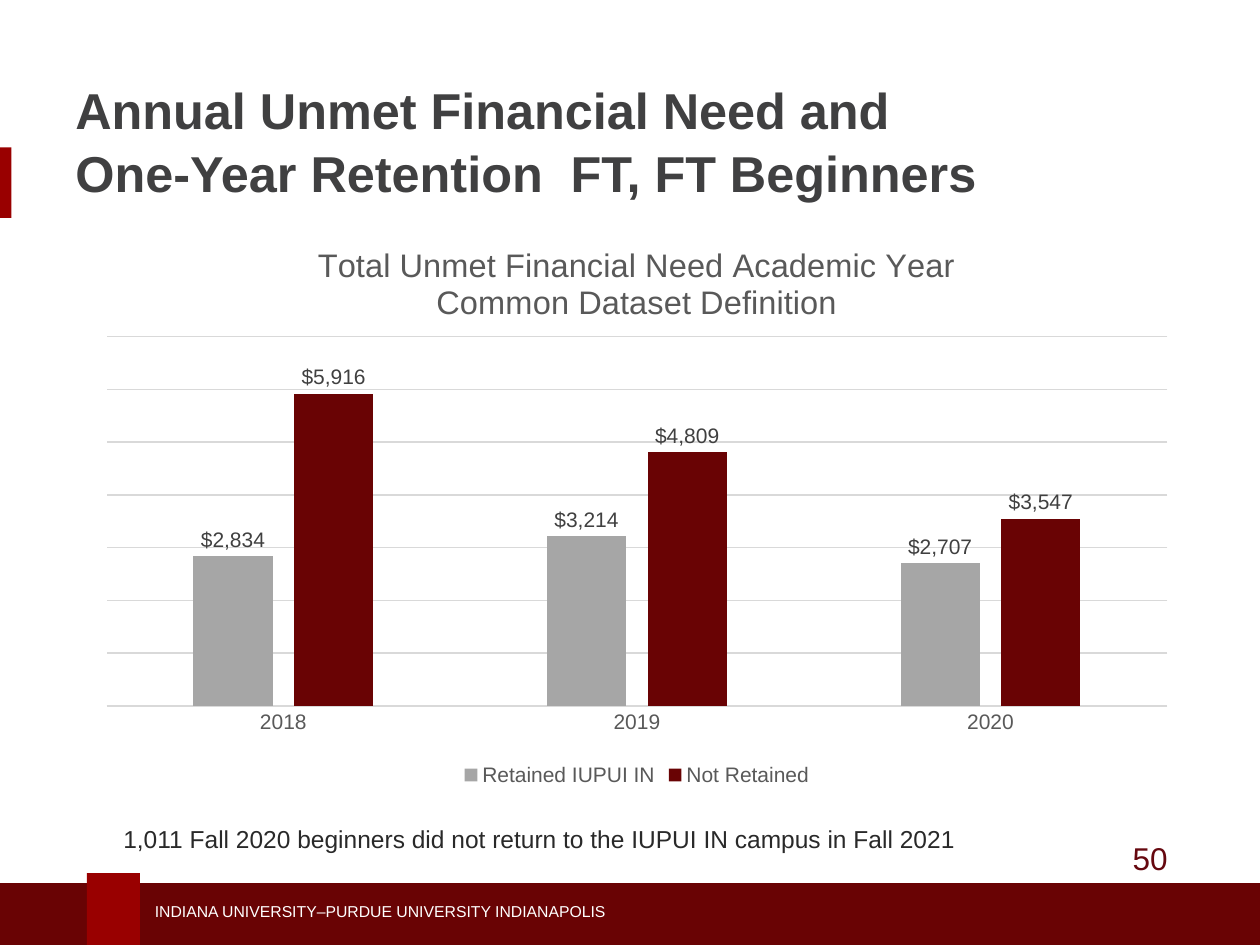
from lxml import etree
from pptx import Presentation
from pptx.chart.data import CategoryChartData
from pptx.dml.color import RGBColor
from pptx.enum.chart import XL_CHART_TYPE, XL_LABEL_POSITION, XL_LEGEND_POSITION, XL_TICK_MARK
from pptx.enum.shapes import MSO_SHAPE
from pptx.enum.text import MSO_ANCHOR
from pptx.util import Inches, Pt

COLUMNS = XL_CHART_TYPE.COLUMN_CLUSTERED
OUTSIDE = XL_LABEL_POSITION.OUTSIDE_END
BOTTOM = XL_LEGEND_POSITION.BOTTOM
NO_TICK = XL_TICK_MARK.NONE
RECTANGLE = MSO_SHAPE.RECTANGLE
TOP, MIDDLE = MSO_ANCHOR.TOP, MSO_ANCHOR.MIDDLE

WIDTH, HEIGHT = 10, 7.5
FONT = "Arial"
CRIMSON, DARK_RED, GRAY, RULE = "990000", "690304", "A6A6A6", "D9D9D9"

BLOCKS = [
    ((0, 1.17, 0.09, 0.56), CRIMSON),
    ((-0.03, 7.01, 10.09, 0.5), DARK_RED),
    ((0.69, 6.93, 0.42, 0.58), CRIMSON),
]
TEXTS = [
    ("INDIANA UNIVERSITY–PURDUE UNIVERSITY INDIANAPOLIS",
     (1.13, 7.11, 3.95, 0.25), 9, "FFFFFF", False, MIDDLE, True),
    ("Annual Unmet Financial Need and \vOne-Year Retention  FT, FT Beginners",
     (0.5, 0.76, 8.75, 0.7), 28.8, "404041", True, MIDDLE, True),
    ("50", (8.89, 6.61, 0.9, 0.4), 18, "66080F", False, TOP, True),
    ("1,011 Fall 2020 beginners did not return to the IUPUI IN campus in Fall 2021",
     (0.88, 6.49, 6.85, 0.34), 14, "292929", False, TOP, False),
]
CHART_AREA = (0.67, 1.77, 8.77, 4.51)
CHART_TITLE = ["Total Unmet Financial Need Academic Year", "Common Dataset Definition"]
PLOT_SHARES = {"x": 0.02, "y": 0.2, "w": 0.96, "h": 0.65}
YEARS = ["2018", "2019", "2020"]
SERIES = [
    ("Retained IUPUI IN", [2834, 3214, 2707], GRAY),
    ("Not Retained", [5916, 4809, 3547], DARK_RED),
]
DOLLARS = '"$"#,##0'
CHART_NS = "http://schemas.openxmlformats.org/drawingml/2006/chart"


def color(value):
    return RGBColor.from_string(value)


def inches(area):
    return [Inches(length) for length in area]


def style(font, size, value, bold=False):
    font.name, font.size, font.bold = FONT, Pt(size), bold
    font.color.rgb = color(value)


def rule(line):
    line.color.rgb = color(RULE)
    line.width = Pt(0.75)


def add_block(page, area, fill):
    block = page.shapes.add_shape(RECTANGLE, *inches(area))
    block.shadow.inherit = False
    block.fill.solid()
    block.fill.fore_color.rgb = color(fill)
    block.line.fill.background()


def add_text(page, text, area, size, value, bold, anchor, wrap):
    frame = page.shapes.add_textbox(*inches(area)).text_frame
    frame.text = text
    frame.word_wrap = wrap
    frame.vertical_anchor = anchor
    para = frame.paragraphs[0]
    if "\v" in text:
        para.line_spacing = 1.04
    for span in para.runs:
        style(span.font, size, value, bold)


def place_plot(chart):
    area = chart.element.chart.plotArea
    for old in area.findall(f"{{{CHART_NS}}}layout"):
        area.remove(old)
    layout = etree.Element(f"{{{CHART_NS}}}layout")
    manual = etree.SubElement(layout, f"{{{CHART_NS}}}manualLayout")
    settings = {"layoutTarget": "inner", "xMode": "edge", "yMode": "edge", **PLOT_SHARES}
    for name, value in settings.items():
        etree.SubElement(manual, f"{{{CHART_NS}}}{name}", val=str(value))
    area.insert(0, layout)


def add_need_chart(page):
    data = CategoryChartData(number_format=DOLLARS)
    data.categories = YEARS
    for name, values, _ in SERIES:
        data.add_series(name, values)
    chart = page.shapes.add_chart(COLUMNS, *inches(CHART_AREA), data).chart
    style(chart.font, 10, "000000")
    place_plot(chart)

    title = chart.chart_title.text_frame
    title.text = "\n".join(CHART_TITLE)
    for para in title.paragraphs:
        for span in para.runs:
            style(span.font, 18.6, "595959")

    chart.has_legend = True
    chart.legend.position = BOTTOM
    chart.legend.include_in_layout = False
    style(chart.legend.font, 12, "595959")

    years, dollars = chart.category_axis, chart.value_axis
    years.major_tick_mark = NO_TICK
    style(years.tick_labels.font, 12, "595959")
    rule(years.format.line)
    dollars.visible = False
    dollars.minimum_scale, dollars.maximum_scale, dollars.major_unit = 0, 7000, 1000
    rule(dollars.major_gridlines.format.line)

    plot = chart.plots[0]
    plot.gap_width, plot.overlap = 219, -27
    plot.vary_by_categories = False
    for series, (_, _, fill) in zip(plot.series, SERIES):
        series.format.fill.solid()
        series.format.fill.fore_color.rgb = color(fill)
        labels = series.data_labels
        labels.show_value = True
        labels.position = OUTSIDE
        labels.number_format = DOLLARS
        labels.number_format_is_linked = False
        style(labels.font, 12, "404040")


def main():
    """Build the unmet financial need slide."""
    deck = Presentation()
    deck.slide_width, deck.slide_height = Inches(WIDTH), Inches(HEIGHT)
    page = deck.slides.add_slide(deck.slide_layouts[6])
    for block in BLOCKS:
        add_block(page, *block)
    for text in TEXTS:
        add_text(page, *text)
    add_need_chart(page)
    deck.save("out.pptx")


if __name__ == "__main__":
    main()
